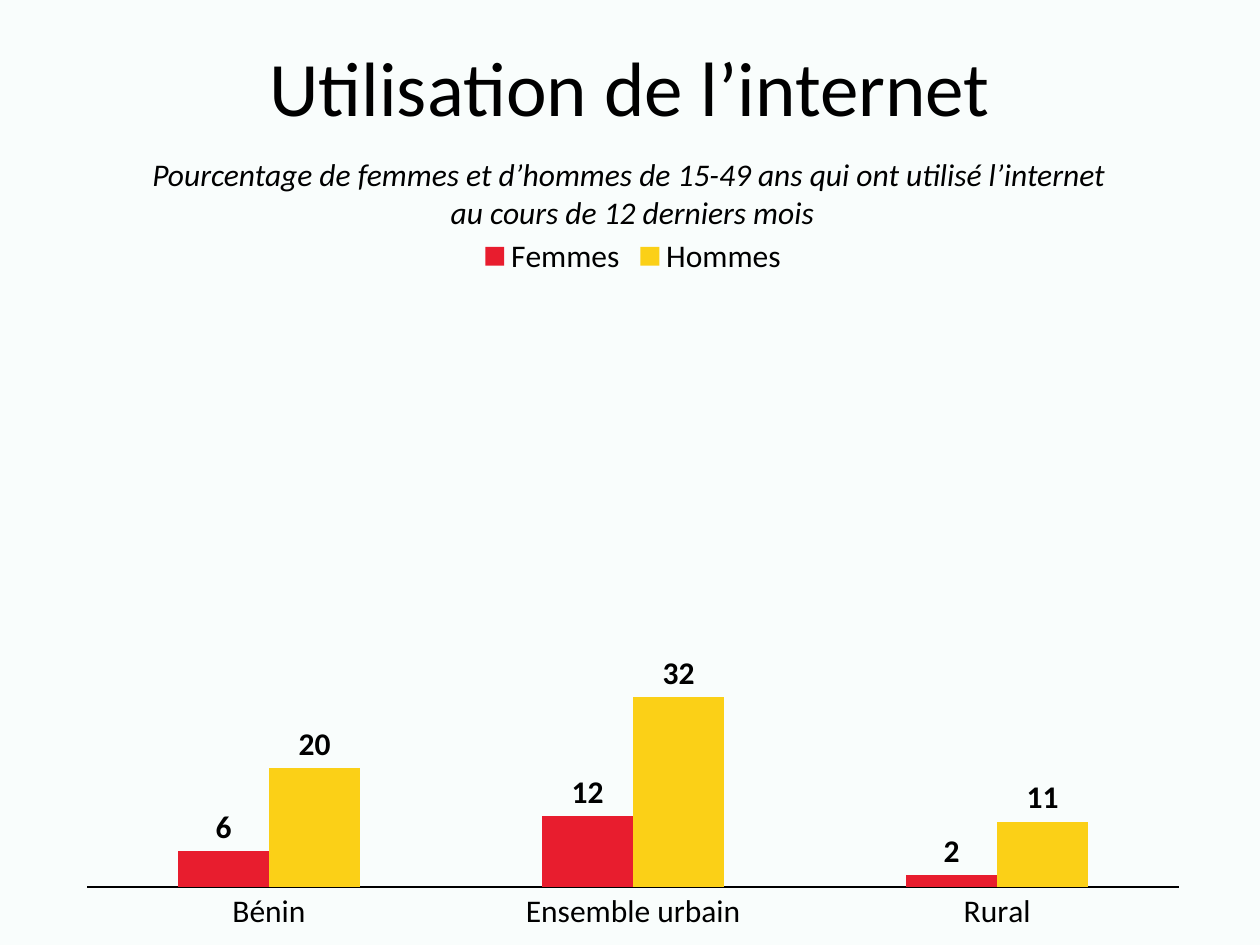
from lxml import etree
from pptx import Presentation
from pptx.chart.data import CategoryChartData
from pptx.dml.color import RGBColor
from pptx.enum.chart import XL_CHART_TYPE, XL_LABEL_POSITION, XL_LEGEND_POSITION, XL_TICK_MARK
from pptx.enum.text import MSO_ANCHOR, PP_ALIGN
from pptx.util import Inches, Pt

COLUMNS = XL_CHART_TYPE.COLUMN_CLUSTERED
OUTSIDE = XL_LABEL_POSITION.OUTSIDE_END
TOP = XL_LEGEND_POSITION.TOP
NO_TICK = XL_TICK_MARK.NONE
CENTER = PP_ALIGN.CENTER
MIDDLE, UPPER = MSO_ANCHOR.MIDDLE, MSO_ANCHOR.TOP

FONT, BLACK, BACKGROUND = "Calibri", "000000", "F9FDFC"
TEXTS = [
    {"box": (0, 0, 10, 1.45), "lines": ["Utilisation de l’internet"],
     "anchor": MIDDLE, "spacing": 0.9, "font": {"size": Pt(44)}},
    {"box": (0.02, 1.18, 10, 0.71),
     "lines": ["Pourcentage de femmes et d’hommes de 15-49 ans qui ont utilisé l’internet ",
               "au cours de 12 derniers mois"],
     "anchor": UPPER, "spacing": 1.0, "font": {"size": Pt(18), "italic": True}},
]
CHART_BOX = (0.51, 1.76, 9.03, 5.74)
PLOT_SHARES = {"x": 0.02, "y": 0.1, "w": 0.96, "h": 0.82}
CATEGORIES = ["Bénin", "Ensemble urbain", "Rural"]
SERIES = [("Femmes", (6, 12, 2), "E81D2E"), ("Hommes", (20, 32, 11), "FBD017")]


def rgb(value):
    """Turn a hex string into a colour."""
    return RGBColor.from_string(value)


def style_font(font, **values):
    """Apply the slide's font, then the given format values."""
    font.color.rgb = rgb(BLACK)
    for name, value in {"name": FONT, "size": Pt(18), **values}.items():
        setattr(font, name, value)


def add_text(s, item):
    """Add a centred text box with one paragraph per line."""
    tf = s.shapes.add_textbox(*map(Inches, item["box"])).text_frame
    tf.word_wrap = True
    tf.vertical_anchor = item["anchor"]
    for i, line in enumerate(item["lines"]):
        p = tf.add_paragraph() if i else tf.paragraphs[0]
        p.alignment, p.line_spacing = CENTER, item["spacing"]
        r = p.add_run()
        r.text = line
        style_font(r.font, **item["font"])


def place_plot(chart):
    """Fix the inner plot area as shares of the chart."""
    area = chart.plots[0]._element.getparent()
    ns = "{%s}" % etree.QName(area).namespace
    for old in area.findall(ns + "layout"):
        area.remove(old)
    layout = etree.Element(ns + "layout")
    manual = etree.SubElement(layout, ns + "manualLayout")
    values = {"layoutTarget": "inner", "xMode": "edge", "yMode": "edge", **PLOT_SHARES}
    for name, value in values.items():
        etree.SubElement(manual, ns + name).set("val", str(value))
    area.insert(0, layout)


def add_columns(s):
    """Add the clustered column chart."""
    data = CategoryChartData(number_format="0")
    data.categories = CATEGORIES
    for name, values, _ in SERIES:
        data.add_series(name, values)
    chart = s.shapes.add_chart(COLUMNS, *map(Inches, CHART_BOX), data).chart
    style_font(chart.font, size=Pt(10))
    chart.has_title = False
    chart.has_legend = True
    chart.legend.position = TOP
    chart.legend.include_in_layout = False
    style_font(chart.legend.font)

    axis = chart.category_axis
    axis.major_tick_mark = axis.minor_tick_mark = NO_TICK
    axis.format.line.color.rgb = rgb(BLACK)
    axis.format.line.width = Pt(0.75)
    style_font(axis.tick_labels.font)
    scale = chart.value_axis
    scale.minimum_scale, scale.maximum_scale = 0, 100
    scale.has_major_gridlines = scale.visible = False

    plot = chart.plots[0]
    plot.gap_width, plot.overlap, plot.vary_by_categories = 200, 0, False
    for series, (_, _, color) in zip(plot.series, SERIES):
        series.format.fill.solid()
        series.format.fill.fore_color.rgb = rgb(color)
        labels = series.data_labels
        labels.show_value, labels.position = True, OUTSIDE
        labels.number_format, labels.number_format_is_linked = "0", False
        style_font(labels.font, bold=True)
    place_plot(chart)


def main():
    """Build and save the slide."""
    prs = Presentation()
    prs.slide_width, prs.slide_height = Inches(10), Inches(7.5)
    s = prs.slides.add_slide(prs.slide_layouts[6])
    s.background.fill.solid()
    s.background.fill.fore_color.rgb = rgb(BACKGROUND)
    title, subtitle = TEXTS
    add_text(s, title)
    add_columns(s)
    add_text(s, subtitle)
    prs.save("out.pptx")


if __name__ == "__main__":
    main()
